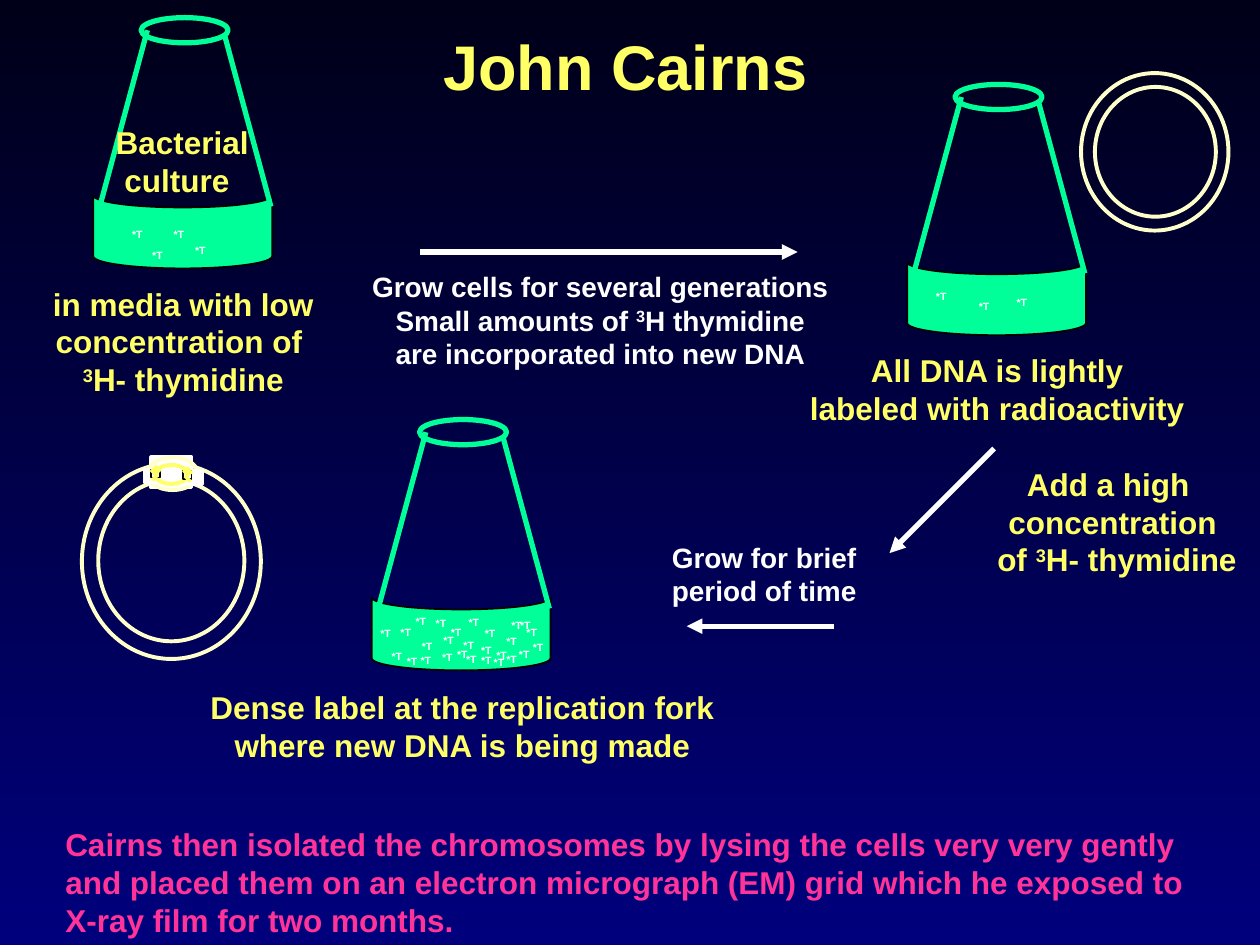
import pptx
import pptx.util
import pptx.dml.color
import pptx.enum.dml
import pptx.enum.shapes
import pptx.enum.text
import pptx.oxml
import pptx.oxml.ns

Inches, Pt = pptx.util.Inches, pptx.util.Pt
SHAPE = pptx.enum.shapes.MSO_SHAPE
ALIGN = pptx.enum.text.PP_ALIGN

COLOR = {
    "top": "000018", "base": "00007C", "yellow": "FFFF66", "white": "FFFFFF",
    "green": "00FF99", "cream": "FFFFCC", "pink": "FF3399", "black": "000000",
}

# A caret lifts the character after it.
TITLE = ("John Cairns", (3.42, 0.17, 3.09, 0.7))
STEPS = [  # text, box, size, colour, wrap
    ("Grow cells for several generations\nSmall amounts of ^3H thymidine\n"
     "are incorporated into new DNA", (2.85, 2.09, 3.83, 1.17), 16, "white", False),
    ("Grow for brief period of time", (5.19, 4.24, 1.75, 0.64), 16, "white", True),
    ("Add a high \nconcentration\n of ^3H- thymidine",
     (7.74, 3.64, 2.18, 1), 18, "yellow", False),
]
ARROWS = [(3.33, 2, 6.33, 2), (6.62, 4.97, 5.45, 4.97), (7.89, 3.56, 7.06, 4.39)]
CLOSING = ("Cairns then isolated the chromosomes by lysing the cells very very gently "
           "and placed them on an electron micrograph (EM) grid which he exposed to "
           "X-ray film for two months.", (0.42, 6.5, 9.33, 1))

FLASKS = [  # rim corner, caption, caption box, places of the *T marks
    ((1.12, 0.14), "in media with low\nconcentration of \n^3H- thymidine",
     (0.32, 2.21, 2.27, 1),
     [(0.95, 1.76), (1.11, 1.93), (1.28, 1.76), (1.45, 1.89)]),
    ((3.33, 3.33), "Dense label at the replication fork\nwhere new DNA is being made",
     (1.57, 5.41, 4.2, 0.7),
     [(3.08, 4.92), (3.25, 5.03), (3.42, 4.98), (3.58, 5.02), (3.75, 4.93),
      (3.92, 4.99), (4.08, 4.92), (3.96, 4.86), (3.84, 5.1), (3.72, 5.14),
      (3.6, 5.13), (3.48, 4.92), (3.36, 4.85), (3.24, 5.14), (3.13, 5.15),
      (3.01, 5.11), (2.92, 4.93), (3.2, 4.83), (3.62, 4.84), (4.03, 4.86),
      (4.13, 5.04), (4.02, 5.09), (3.92, 5.13), (3.82, 5.16), (3.72, 5.06),
      (3.53, 5.09), (3.41, 5.12)]),
    ((7.58, 0.67), "All DNA is lightly\nlabeled with radioactivity",
     (6.33, 2.74, 3.17, 0.7),
     [(7.33, 2.25), (7.67, 2.33), (7.97, 2.3)]),
]
CULTURE = ("Bacterial\n culture", (0.82, 0.93, 1.26, 0.7))

RINGS = [(0.65, 3.68, 1.42, 1.55), (0.78, 3.81, 1.16, 1.28),
         (8.58, 0.58, 1.17, 1.25), (8.69, 0.69, 0.96, 1.03)]
FORK = [  # kind, box, fill, line, width
    (SHAPE.RECTANGLE, (1.2, 3.63, 0.32, 0.24), "white", "white", 2.25),
    (SHAPE.OVAL, (1.17, 3.63, 0.4, 0.26), None, "cream", 2.25),
    (SHAPE.RECTANGLE, (1.15, 3.73, 0.09, 0.1), "white", "white", 2.25),
    (SHAPE.RECTANGLE, (1.51, 3.74, 0.09, 0.1), "white", "white", 2.25),
    (SHAPE.OVAL, (1.23, 3.69, 0.26, 0.15), None, "yellow", 2.25),
    (SHAPE.RECTANGLE, (1.2, 3.73, 0.07, 0.06), "white", "black", 1),
    (SHAPE.RECTANGLE, (1.45, 3.74, 0.07, 0.06), "white", "black", 1),
]
TIPS = [(1.26, 3.71, 1.21, 3.76), (1.47, 3.72, 1.51, 3.77),
        (1.24, 3.8, 1.22, 3.78), (1.48, 3.81, 1.5, 3.79)]


def rgb(name):
    return pptx.dml.color.RGBColor.from_string(COLOR[name])


def add_text(slide, text, box, size=18, color="yellow", align=ALIGN.CENTER, wrap=False):
    frame = slide.shapes.add_textbox(*map(Inches, box)).text_frame
    frame.word_wrap = wrap
    frame.auto_size = pptx.enum.text.MSO_AUTO_SIZE.SHAPE_TO_FIT_TEXT
    for i, row in enumerate(text.split("\n")):
        para = frame.paragraphs[0] if i == 0 else frame.add_paragraph()
        para.alignment = align
        first, *rest = row.split("^")
        parts = [(first, False)]
        for part in rest:
            parts += [(part[0], True), (part[1:], False)]
        for words, lifted in parts:
            if not words:
                continue
            run = para.add_run()
            run.text = words
            font = run.font
            font.name, font.size, font.bold = "Arial", Pt(size), True
            font.color.rgb = rgb(color)
            if lifted:
                run._r.get_or_add_rPr().set("baseline", "30000")


def add_shape(slide, kind, box, fill, line, width):
    shape = slide.shapes.add_shape(kind, *map(Inches, box))
    shape.shadow.inherit = False
    if fill:
        shape.fill.solid()
        shape.fill.fore_color.rgb = rgb(fill)
    else:
        shape.fill.background()
    shape.line.color.rgb = rgb(line)
    shape.line.width = Pt(width)
    return shape


def add_line(slide, ends, color, width, arrow=False):
    kind = pptx.enum.shapes.MSO_CONNECTOR.STRAIGHT
    link = slide.shapes.add_connector(kind, *map(Inches, ends))
    link.line.color.rgb = rgb(color)
    link.line.width = Pt(width)
    if arrow:
        head = pptx.oxml.parse_xml(
            f'<a:tailEnd {pptx.oxml.ns.nsdecls("a")} type="triangle"/>')
        link.line._get_or_add_ln().append(head)
    props = link._element.spPr
    props.append(pptx.oxml.parse_xml(f'<a:effectLst {pptx.oxml.ns.nsdecls("a")}/>'))


def add_flask(slide, x, y):
    """Draw a flask whose rim has its top left corner at x, y."""
    body = add_shape(slide, SHAPE.FLOWCHART_STORED_DATA,
                     (x + 0.04, y + 0.99, 0.58, 1.42), "green", "black", 1)
    body.rotation = 90
    body._element.spPr.xfrm.set("flipH", "1")
    add_shape(slide, SHAPE.OVAL, (x, y, 0.69, 0.2), None, "green", 3)
    add_line(slide, (x - 0.32, y + 1.47, x + 0.05, y + 0.1), "green", 3)
    add_line(slide, (x + 1.03, y + 1.5, x + 0.66, y + 0.13), "green", 3)


def main():
    deck = pptx.Presentation()
    deck.slide_width, deck.slide_height = Inches(10), Inches(7.5)
    slide = deck.slides.add_slide(deck.slide_layouts[6])
    back = slide.background.fill
    back.gradient()
    back.gradient_angle = 270
    for stop, name in zip(back.gradient_stops, ("top", "base")):
        stop.color.rgb = rgb(name)

    add_text(slide, *TITLE, size=36, align=ALIGN.LEFT)
    for text, box, size, color, wrap in STEPS:
        add_text(slide, text, box, size=size, color=color, wrap=wrap)
    for ends in ARROWS:
        add_line(slide, ends, "white", 3, arrow=True)

    for rim, text, box, marks in FLASKS:
        add_flask(slide, *rim)
        add_text(slide, text, box)
        for x, y in marks:
            add_text(slide, "*T", (x, y, 0.28, 0.2), size=6, color="white",
                     align=ALIGN.LEFT)
    add_text(slide, *CULTURE, align=ALIGN.LEFT)

    for box in RINGS:
        add_shape(slide, SHAPE.OVAL, box, None, "cream", 2.25)
    for part in FORK:
        add_shape(slide, *part)
    for ends in TIPS:
        add_line(slide, ends, "yellow", 4.5)
    add_text(slide, *CLOSING, color="pink", align=ALIGN.LEFT, wrap=True)
    deck.save("out.pptx")


if __name__ == "__main__":
    main()
